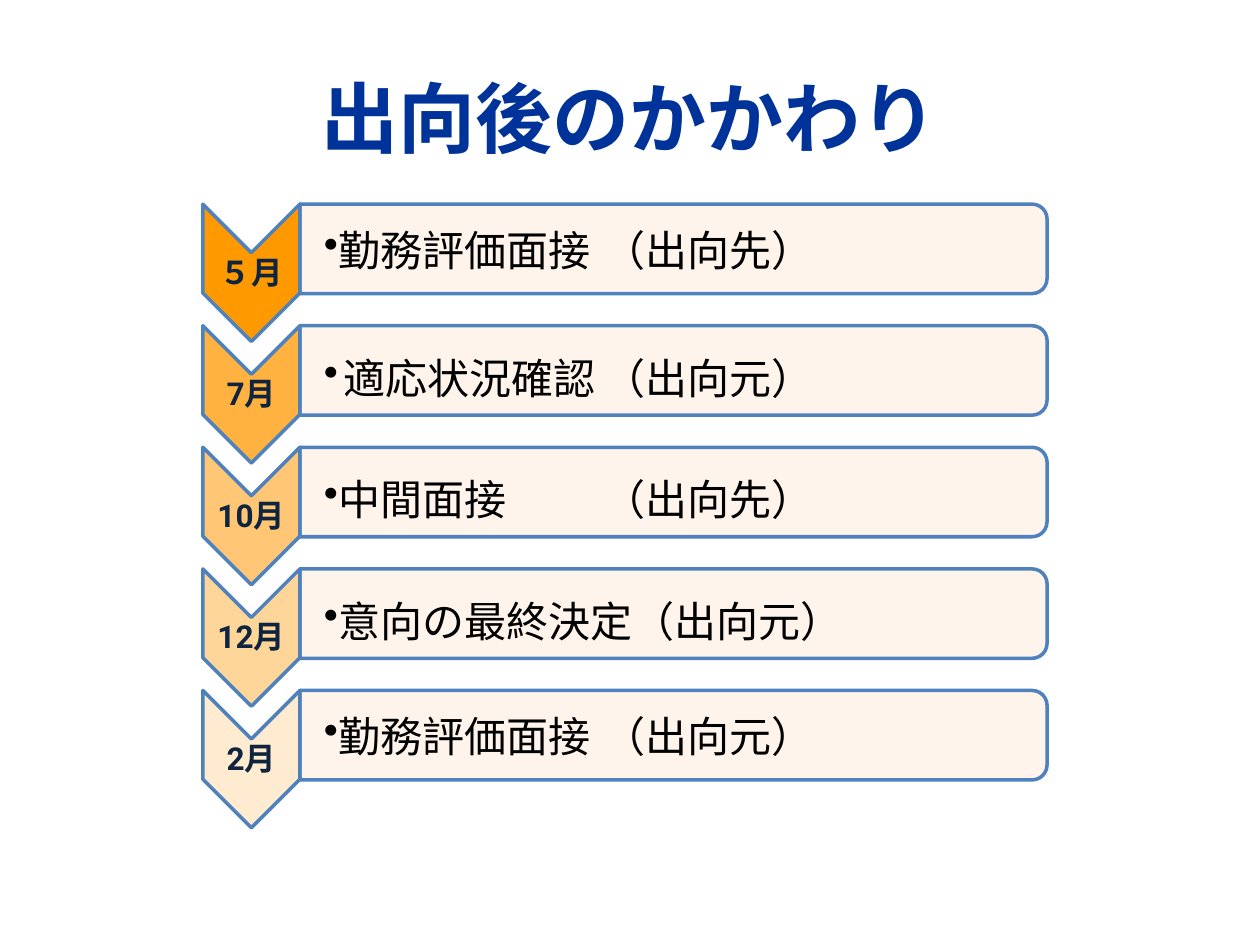
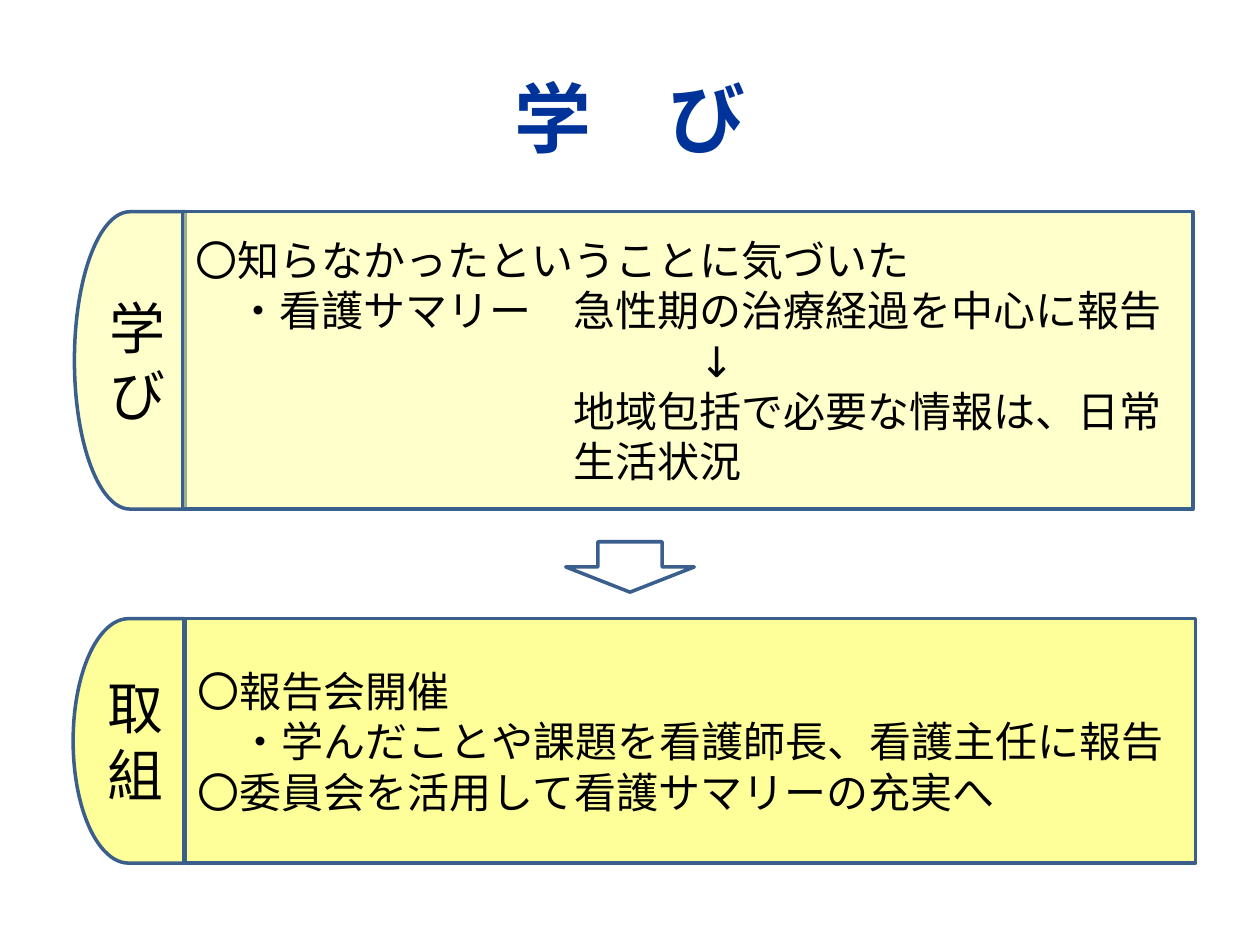
import pptx
import pptx.dml.color
import pptx.enum.shapes
import pptx.enum.text
import pptx.oxml.ns
import pptx.util
from lxml import etree

RGBColor = pptx.dml.color.RGBColor
Shape = pptx.enum.shapes.MSO_SHAPE
Align = pptx.enum.text.PP_ALIGN
Anchor = pptx.enum.text.MSO_ANCHOR
qn = pptx.oxml.ns.qn

NAVY = RGBColor(0x00, 0x33, 0x99)
INK = RGBColor(0x0F, 0x24, 0x3E)
BLACK = RGBColor(0x00, 0x00, 0x00)
ORANGE = RGBColor(0xFF, 0x99, 0x00)
PEACH = RGBColor(0xF7, 0x96, 0x46)
YELLOW = RGBColor(0xFF, 0xFF, 0x99)
BLUE = RGBColor(0x4F, 0x81, 0xBD)
STEEL = RGBColor(0x3A, 0x5F, 0x8C)

COLUMNS, ROWS = 100, 75
MAIN_FONT = "Roboto"
CJK_FONT = "Noto Sans CJK JP"


class SlideBuilder:
    def __init__(self):
        self.deck = pptx.Presentation()
        self.deck.slide_width = pptx.util.Inches(10)
        self.deck.slide_height = pptx.util.Inches(7.5)
        self.column = self.deck.slide_width / COLUMNS
        self.row = self.deck.slide_height / ROWS
        self.page = None

    def place(self, left, top, width, height):
        return (round(left * self.column), round(top * self.row),
                round(width * self.column), round(height * self.row))

    def new_page(self, title):
        self.page = self.deck.slides.add_slide(self.deck.slide_layouts[6])
        box = self.text_box((5, 3, 90, 12.5), (1, 0.5, 1, 0.5))
        self.add_line(box, title, 44, NAVY, bold=True, align=Align.CENTER)

    def shape(self, kind, area, line, fill=None, opacity=100, rotation=0):
        left, top, width, height = area
        if rotation == 90:
            left += (width - height) / 2
            top += (height - width) / 2
            width, height = height, width
        shape = self.page.shapes.add_shape(kind, *self.place(left, top, width, height))
        shape.rotation = rotation
        shape.shadow.inherit = False
        shape.line.color.rgb = line
        shape.line.width = pptx.util.Pt(2)
        if fill is None:
            shape.fill.background()
            return shape
        shape.fill.solid()
        shape.fill.fore_color.rgb = fill
        if opacity < 100:
            colour = shape.element.spPr.find(qn("a:solidFill"))[0]
            etree.SubElement(colour, qn("a:alpha"), val=str(opacity * 1000))
        return shape

    def text_box(self, area, insets=(0, 0, 0, 0)):
        box = self.page.shapes.add_textbox(*self.place(*area))
        frame = box.text_frame
        frame.margin_left, frame.margin_top, frame.margin_right, frame.margin_bottom = self.place(*insets)
        self.settle(frame)
        return box

    def settle(self, frame):
        frame.word_wrap = True
        frame.vertical_anchor = Anchor.MIDDLE

    def add_line(self, box, text, size, color, bold=False, align=Align.LEFT,
                 font=MAIN_FONT, indent=0, hang=0, tab=0, spacing=None):
        frame = box.text_frame
        para = frame.paragraphs[0]
        if para.text:
            para = frame.add_paragraph()
        para.text = text
        para.alignment = align
        if spacing:
            para.line_spacing = spacing
        properties = para._p.get_or_add_pPr()
        properties.set("marL", str(round((indent + hang) * self.column)))
        properties.set("indent", str(round(-hang * self.column)))
        if hang:
            etree.SubElement(properties, qn("a:buChar"), char="•")
        if tab:
            stops = etree.SubElement(properties, qn("a:tabLst"))
            etree.SubElement(stops, qn("a:tab"), pos=str(round(tab * self.column)), algn="l")
        para.font.size = pptx.util.Pt(size)
        para.font.bold = bold
        para.font.color.rgb = color
        para.font.name = font
        etree.SubElement(properties.find(qn("a:defRPr")), qn("a:ea"), typeface=font)

    def month_step(self, top, month, opacity, text, hang, lowering):
        self.shape(Shape.CHEVRON, (16.1, top, 7.7, 10.9), BLUE, ORANGE, opacity, 90)
        label = self.text_box((16.1, top + 3.9, 7.7, 3.3), (0.1, 0.1, 0.1, 0.1))
        self.add_line(label, month, 18, INK, bold=True, align=Align.CENTER, spacing=0.9)
        self.shape(Shape.ROUND_2_SAME_RECTANGLE, (23.8, top, 59.3, 7.1), BLUE, PEACH, 10, 90)
        box = self.text_box((23.8, top + 0.4 + lowering, 58.9, 6.4), (1.9, 0.2, 0.2, 0.2))
        self.add_line(box, text, 24, BLACK, hang=hang, tab=22.2)

    def section(self, tab_left, box_left, top, height, heading, opacity, font, lines):
        self.shape(Shape.FLOWCHART_DELAY, (tab_left, top, 8.8, height), STEEL, YELLOW, opacity, 180)
        label = self.text_box((tab_left + 2, top, 6, height))
        self.add_line(label, heading, 32, BLACK, align=Align.CENTER)
        box = self.shape(Shape.RECTANGLE, (box_left, top, 80.2, height), STEEL, YELLOW, opacity)
        self.settle(box.text_frame)
        for characters, text in lines:
            self.add_line(box, text, 24, BLACK, font=font, indent=characters * 10 / 3)


def main():
    builder = SlideBuilder()

    builder.new_page("出向後のかかわり")
    steps = [
        ("５月", 100, "勤務評価面接\t（出向先）", 1.1, 0),
        ("7月", 75, "適応状況確認\t（出向元）", 1.6, 0.5),
        ("10月", 54, "中間面接\t（出向先）", 1.1, 0.5),
        ("12月", 40, "意向の最終決定（出向元）", 1.1, 0.5),
        ("2月", 19, "勤務評価面接\t（出向元）", 1.1, 0),
    ]
    for number, step in enumerate(steps):
        builder.month_step(16.2 + 9.65 * number, *step)

    builder.new_page("学　び")
    builder.section(5.9, 14.5, 16.8, 23.6, "学び", 50, MAIN_FONT, [
        (0, "〇知らなかったということに気づいた"),
        (1, "・看護サマリー　急性期の治療経過を中心に報告"),
        (12, "↓"),
        (9, "地域包括で必要な情報は、日常"),
        (9, "生活状況"),
    ])
    builder.section(5.8, 14.7, 49.1, 19.4, "取組", 100, CJK_FONT, [
        (0, "〇報告会開催"),
        (1, "・学んだことや課題を看護師長、看護主任に報告"),
        (0, "〇委員会を活用して看護サマリーの充実へ"),
    ])
    builder.shape(Shape.DOWN_ARROW, (44.9, 43, 10.2, 4), STEEL)

    builder.deck.save("out.pptx")


if __name__ == "__main__":
    main()
